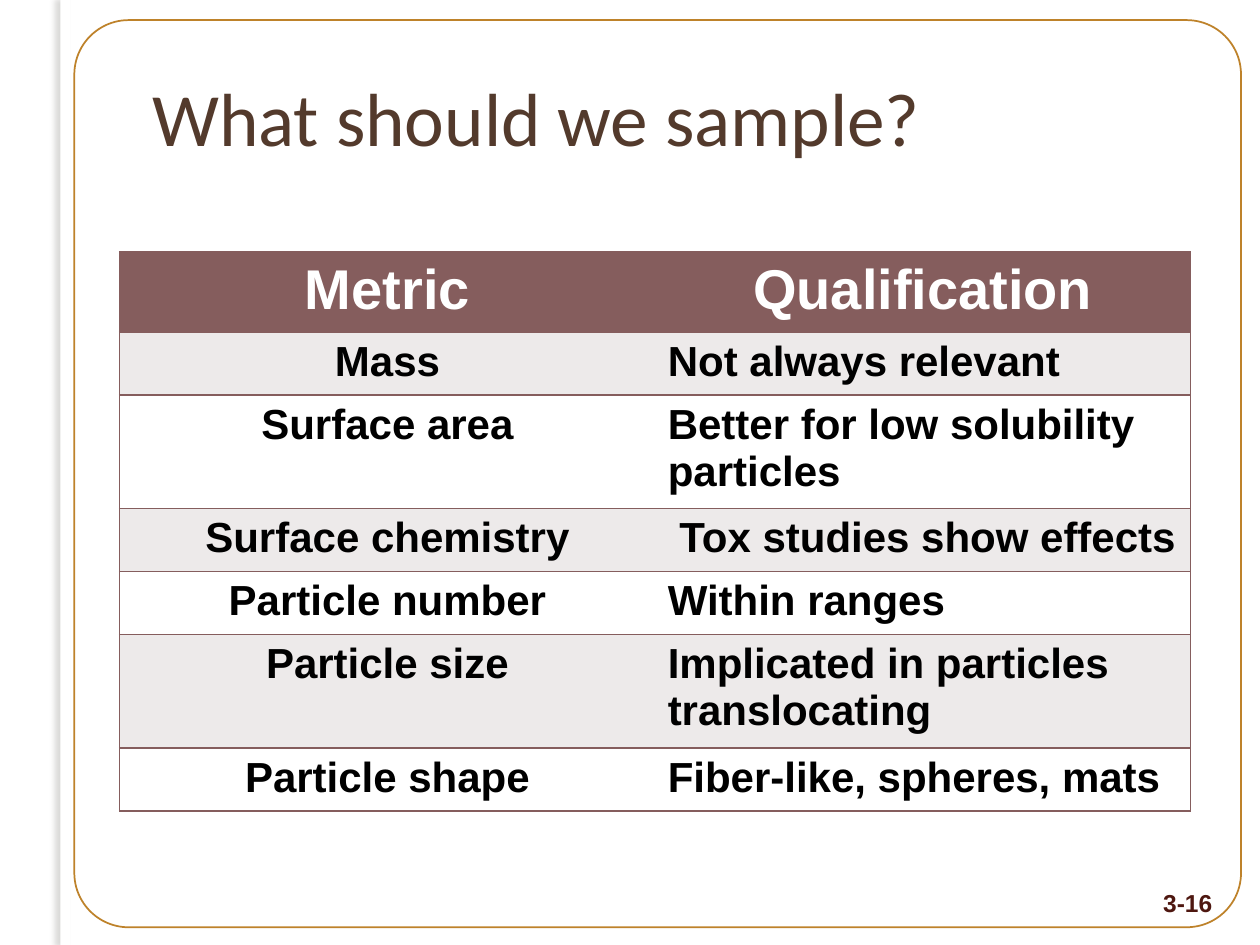
from lxml import etree
from pptx import Presentation
from pptx.dml.color import RGBColor
from pptx.enum.shapes import MSO_SHAPE
from pptx.enum.text import MSO_ANCHOR, PP_ALIGN
from pptx.oxml import parse_xml
from pptx.oxml.ns import nsdecls, qn
from pptx.util import Inches, Pt

WHITE = RGBColor(0xFF, 0xFF, 0xFF)
BLACK = RGBColor(0x00, 0x00, 0x00)
GOLD = RGBColor(0xB7, 0x75, 0x13)
BROWN = RGBColor(0x53, 0x3A, 0x2C)
MAROON = RGBColor(0x4E, 0x17, 0x10)
MAUVE = RGBColor(0x85, 0x5D, 0x5D)
PALE = RGBColor(0xED, 0xEA, 0xEA)


def add_run(p, text, font, size, color, bold=False):
    r = p.add_run()
    r.text = text
    r.font.name = font
    r.font.size = Pt(size)
    r.font.color.rgb = color
    r.font.bold = bold


def set_borders(cell, sides):
    tcPr = cell._tc.get_or_add_tcPr()
    for i, side in enumerate(["L", "R", "T", "B"]):
        if side in sides:
            line = f'<a:solidFill><a:srgbClr val="{MAUVE}"/></a:solidFill>'
        else:
            line = "<a:noFill/>"
        tcPr.insert(i, parse_xml(
            f'<a:ln{side} {nsdecls("a")} w="12700">{line}</a:ln{side}>'))


prs = Presentation()
prs.slide_width, prs.slide_height = Inches(10), Inches(7.5)
s = prs.slides.add_slide(prs.slide_layouts[6])

# Side strip with a soft shadow to its left
sp = s.shapes.add_shape(MSO_SHAPE.RECTANGLE, Inches(0.48), 0, Inches(0.08), Inches(7.5))
sp.fill.solid()
sp.fill.fore_color.rgb = WHITE
sp.line.fill.background()
sp._element.spPr.append(parse_xml(
    f'<a:effectLst {nsdecls("a")}><a:outerShdw blurRad="38100" dist="38100" dir="10800000">'
    '<a:srgbClr val="74726D"><a:alpha val="25000"/></a:srgbClr>'
    '</a:outerShdw></a:effectLst>'))

# Rounded frame
sp = s.shapes.add_shape(MSO_SHAPE.ROUNDED_RECTANGLE, Inches(0.59), Inches(0.16),
                        Inches(9.26), Inches(7.2))
sp.adjustments[0] = 0.06
sp.shadow.inherit = False
sp.fill.background()
sp.line.color.rgb = GOLD
sp.line.width = Pt(1)
color = sp.line._ln.find(".//" + qn("a:srgbClr"))
etree.SubElement(color, qn("a:alpha")).set("val", "90000")

# Title
tf = s.shapes.add_textbox(Inches(1.11), Inches(0.3), Inches(9.05), Inches(1.25)).text_frame
tf.word_wrap = True
tf.vertical_anchor = MSO_ANCHOR.MIDDLE
add_run(tf.paragraphs[0], "What should we sample?", "Calibri", 43, BROWN)

# Table of metrics: text and row height
rows = [
    ("Metric", "Qualification", 0.6),
    ("Mass", "Not always relevant", 0.47),
    ("Surface area", "Better for low solubility particles", 0.84),
    ("Surface chemistry", " Tox studies show effects", 0.47),
    ("Particle number", "Within ranges", 0.47),
    ("Particle size", "Implicated in particles translocating", 0.84),
    ("Particle shape", "Fiber-like, spheres, mats", 0.47),
]
height = sum(row[2] for row in rows)
table = s.shapes.add_table(len(rows), 2, Inches(0.95), Inches(2),
                           Inches(8.5), Inches(height)).table
for i, (metric, qualification, row_height) in enumerate(rows):
    table.rows[i].height = Inches(row_height)
    header = i == 0
    fill = MAUVE if header else PALE if i % 2 else WHITE
    for j, text in enumerate([metric, qualification]):
        cell = table.cell(i, j)
        cell.fill.solid()
        cell.fill.fore_color.rgb = fill
        set_borders(cell, "RTB" if j else "LTB")
        p = cell.text_frame.paragraphs[0]
        p.alignment = PP_ALIGN.CENTER if header or j == 0 else PP_ALIGN.LEFT
        add_run(p, text, "Arial", 32 if header else 24, WHITE if header else BLACK, True)

# Page number
tf = s.shapes.add_textbox(Inches(9.02), Inches(7), Inches(0.7), Inches(0.29)).text_frame
tf.word_wrap = True
p = tf.paragraphs[0]
p.alignment = PP_ALIGN.RIGHT
add_run(p, "3-16", "Arial", 14, MAROON, True)

prs.save("out.pptx")
